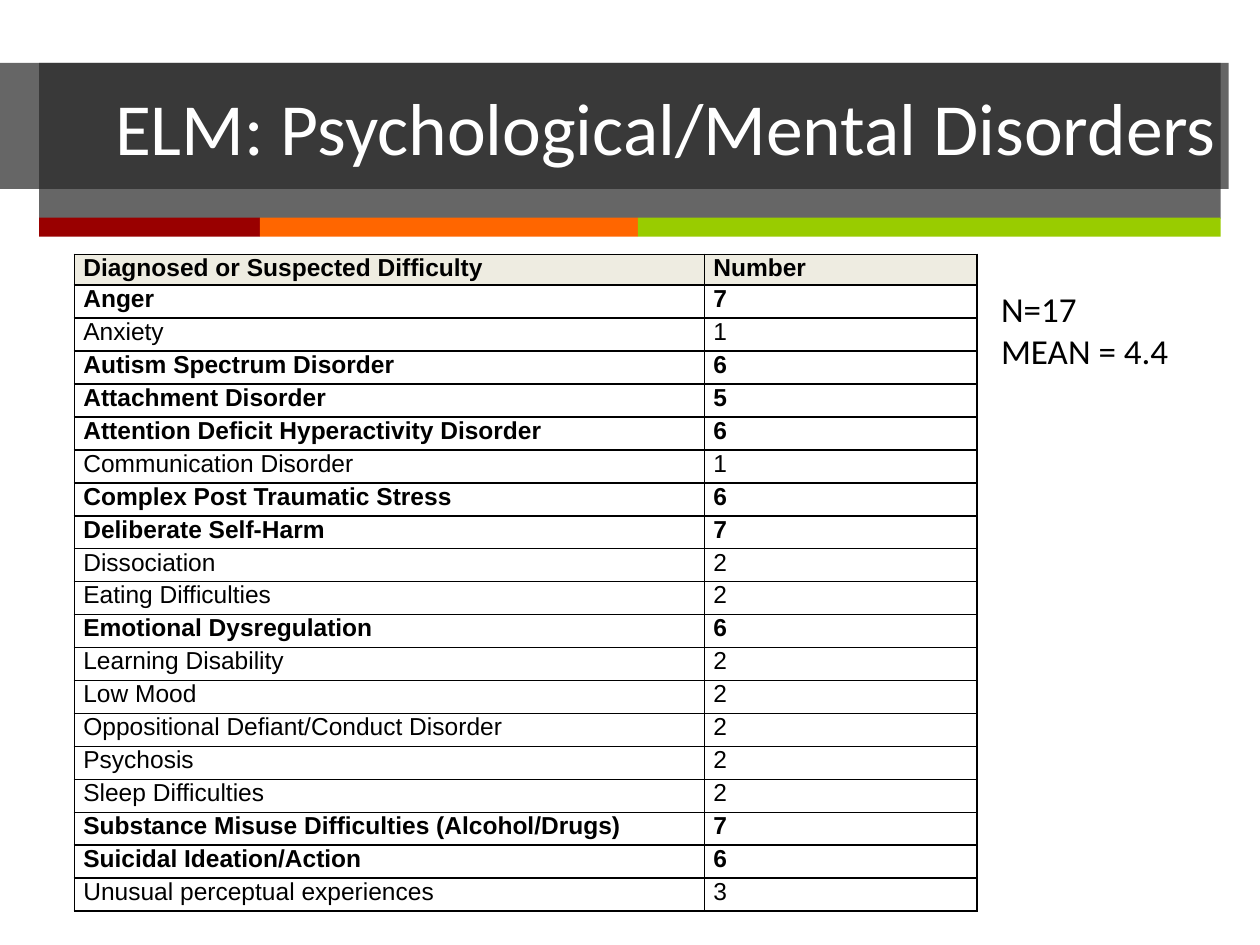
import pptx
import pptx.util
import pptx.dml.color
import pptx.enum.shapes
import pptx.enum.text
import pptx.oxml.ns
import lxml.etree

Cm, Pt = pptx.util.Cm, pptx.util.Pt
qn = pptx.oxml.ns.qn
ALIGN = pptx.enum.text.PP_ALIGN
ANCHOR = pptx.enum.text.MSO_ANCHOR

COLORS = {
    "band": "262626", "red": "990000", "orange": "FF6600", "green": "99CC00",
    "header": "EEECE1", "white": "FFFFFF", "black": "000000",
}
TITLE = "ELM: Psychological/Mental Disorders"
MEAN = 4.4
SUMMARY = ["N=17", f"MEAN = {MEAN}"]
HEADER = ("Diagnosed or Suspected Difficulty", "Number")
DIFFICULTIES = [
    ("Anger", 7),
    ("Anxiety", 1),
    ("Autism Spectrum Disorder", 6),
    ("Attachment Disorder", 5),
    ("Attention Deficit Hyperactivity Disorder", 6),
    ("Communication Disorder", 1),
    ("Complex Post Traumatic Stress", 6),
    ("Deliberate Self-Harm", 7),
    ("Dissociation", 2),
    ("Eating Difficulties", 2),
    ("Emotional Dysregulation", 6),
    ("Learning Disability", 2),
    ("Low Mood", 2),
    ("Oppositional Defiant/Conduct Disorder", 2),
    ("Psychosis", 2),
    ("Sleep Difficulties", 2),
    ("Substance Misuse Difficulties (Alcohol/Drugs)", 7),
    ("Suicidal Ideation/Action", 6),
    ("Unusual perceptual experiences", 3),
]
STRIPES = [("red", 4.45), ("orange", 7.62), ("green", 11.75)]
STRIPE_LEFT, STRIPE_TOP, STRIPE_HEIGHT = 0.79, 4.39, 0.38
COLUMN_WIDTHS = (12.7, 5.5)
TABLE_LEFT, TABLE_TOP, TABLE_HEIGHT, HEADER_HEIGHT = 1.5, 5.13, 13.24, 0.62


def rgb(name):
    return pptx.dml.color.RGBColor.from_string(COLORS[name])


def add_block(slide, color, left, top, width, height, opacity=100):
    block = slide.shapes.add_shape(
        pptx.enum.shapes.MSO_SHAPE.RECTANGLE, Cm(left), Cm(top), Cm(width), Cm(height))
    block.shadow.inherit = False
    block.line.fill.background()
    block.fill.solid()
    block.fill.fore_color.rgb = rgb(color)
    if opacity < 100:
        tint = block.fill._xPr.find(".//" + qn("a:srgbClr"))
        lxml.etree.SubElement(tint, qn("a:alpha"), val=str(opacity * 1000))
    return block


def write(paragraph, text, size, font, color, align, bold=False):
    paragraph.alignment = align
    run = paragraph.add_run()
    run.text = text
    run.font.size = Pt(size)
    run.font.name = font
    run.font.bold = bold
    run.font.color.rgb = rgb(color)


def add_borders(cell):
    properties = cell._tc.get_or_add_tcPr()
    for side in ("lnL", "lnR", "lnT", "lnB"):
        border = lxml.etree.SubElement(properties, qn("a:" + side), w=str(Pt(1)))
        fill = lxml.etree.SubElement(border, qn("a:solidFill"))
        lxml.etree.SubElement(fill, qn("a:srgbClr"), val=COLORS["black"])


def add_difficulties(slide):
    rows = [HEADER] + DIFFICULTIES
    table = slide.shapes.add_table(
        len(rows), len(HEADER), Cm(TABLE_LEFT), Cm(TABLE_TOP),
        Cm(sum(COLUMN_WIDTHS)), Cm(TABLE_HEIGHT)).table
    for column, width in zip(table.columns, COLUMN_WIDTHS):
        column.width = Cm(width)
    row_height = (TABLE_HEIGHT - HEADER_HEIGHT) / len(DIFFICULTIES)
    for r, values in enumerate(rows):
        is_header = r == 0
        table.rows[r].height = Cm(HEADER_HEIGHT if is_header else row_height)
        bold = is_header or values[1] > MEAN
        for c, value in enumerate(values):
            cell = table.cell(r, c)
            cell.margin_left = cell.margin_right = Cm(0.18)
            cell.margin_top = cell.margin_bottom = 0
            add_borders(cell)
            if is_header:
                cell.fill.solid()
                cell.fill.fore_color.rgb = rgb("header")
            else:
                cell.fill.background()
            write(cell.text_frame.paragraphs[0], str(value), 14, "Arial",
                  "black", ALIGN.JUSTIFY, bold)


def add_summary(slide):
    frame = slide.shapes.add_textbox(Cm(19.93), Cm(5.67), Cm(4.83), Cm(1.96)).text_frame
    frame.word_wrap = True
    for i, line in enumerate(SUMMARY):
        paragraph = frame.add_paragraph() if i else frame.paragraphs[0]
        write(paragraph, line, 20, "Calibri", "black", ALIGN.LEFT)


def main():
    deck = pptx.Presentation()
    deck.slide_width, deck.slide_height = Cm(25.4), Cm(19.05)
    slide = deck.slides.add_slide(deck.slide_layouts[6])

    add_block(slide, "band", STRIPE_LEFT, 1.27, 23.82, 3.14, opacity=70)
    left = STRIPE_LEFT
    for color, width in STRIPES:
        add_block(slide, color, left, STRIPE_TOP, width, STRIPE_HEIGHT)
        left += width

    title = add_block(slide, "band", 0, 1.27, 24.77, 2.54, opacity=70).text_frame
    title.word_wrap = True
    title.vertical_anchor = ANCHOR.MIDDLE
    write(title.paragraphs[0], TITLE, 42, "Calibri", "white", ALIGN.RIGHT)

    add_difficulties(slide)
    add_summary(slide)
    deck.save("out.pptx")


if __name__ == "__main__":
    main()
